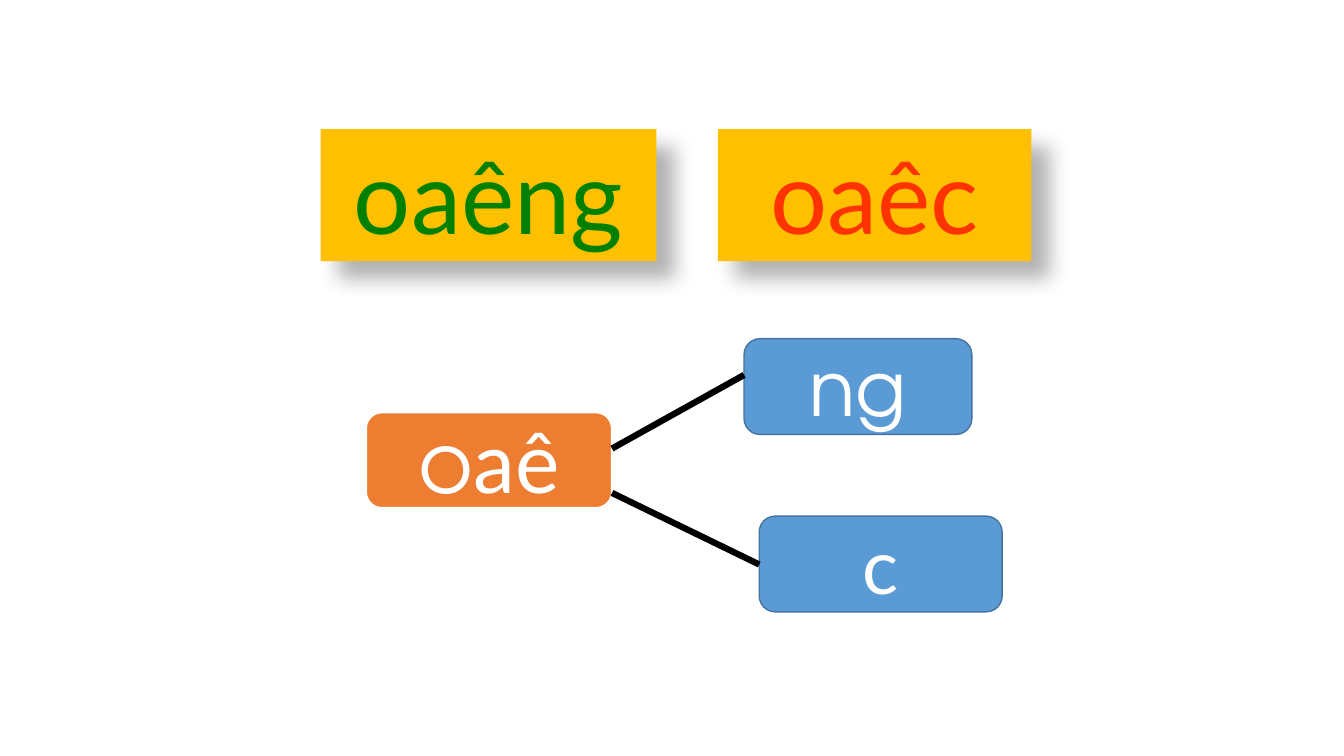
from dataclasses import dataclass

from lxml import etree
from pptx import Presentation
from pptx import util as u
from pptx.dml.color import RGBColor
from pptx.enum import shapes, text
from pptx.oxml.ns import qn

PX = 9144  # EMU per px, 100 px to the inch


@dataclass(frozen=True)
class Theme:
    lato: str = "Lato"
    round: str = "TeX Gyre Adventor"
    gold: str = "FFC000"
    orange: str = "ED7D31"
    blue: str = "5B9BD5"
    edge: str = "43739E"
    green: str = "008000"
    red: str = "FF3300"
    white: str = "FFFFFF"
    black: str = "000000"
    head: int = 72
    stem: int = 60
    tail: int = 54
    link: float = 4.5


T = Theme()


@dataclass(frozen=True)
class Card:
    """A rhyme on a gold card with a soft shadow."""
    left: int
    width: int
    word: str
    ink: str
    top: int = 128
    height: int = 131


@dataclass(frozen=True)
class Node:
    """A rounded box; each piece of its word has its own font."""
    left: int
    top: int
    width: int
    bits: tuple[tuple[str, str], ...]
    fill: str = T.blue
    edge: str = T.edge
    line: float = 1
    size: int = T.tail
    height: int = 95


@dataclass(frozen=True)
class Link:
    x1: int
    y1: int
    x2: int
    y2: int


CARDS = [Card(318, 333, "oaêng", T.green), Card(712, 311, "oaêc", T.red)]
NODES = [
    Node(363, 409, 244, (("o", T.round), ("aê", T.lato)),
         T.orange, T.white, 1.5, T.stem),
    Node(738, 336, 226, (("ng", T.round),)),
    Node(753, 512, 241, (("c", T.lato),)),
]
LINKS = [Link(607, 445, 738, 372), Link(607, 489, 753, 560)]


def rgb(code: str) -> RGBColor:
    return RGBColor.from_string(code)


def add_box(slide, kind, box: Card | Node, fill: str):
    shape = slide.shapes.add_shape(
        kind, box.left * PX, box.top * PX, box.width * PX, box.height * PX)
    shape.shadow.inherit = False
    shape.fill.solid()
    shape.fill.fore_color.rgb = rgb(fill)
    return shape


def write(shape, bits: tuple[tuple[str, str], ...], size: int, ink: str) -> None:
    para = shape.text_frame.paragraphs[0]
    para.alignment = text.PP_ALIGN.CENTER
    for word, font in bits:
        run = para.add_run()
        run.text = word
        run.font.name = font
        run.font.size = u.Pt(size)
        run.font.color.rgb = rgb(ink)


def cast(shape) -> None:
    """Fill the empty effect list with a shadow to the lower right."""
    effects = shape._element.spPr.find(qn("a:effectLst"))
    drop = etree.SubElement(
        effects, qn("a:outerShdw"), blurRad=str(u.Pt(15)), dist=str(u.Pt(18)),
        dir=str(45 * 60000), algn="tl", rotWithShape="0")
    tone = etree.SubElement(drop, qn("a:srgbClr"), val=T.black)
    etree.SubElement(tone, qn("a:alpha"), val="30000")


def add_card(slide, card: Card) -> None:
    shape = add_box(slide, shapes.MSO_SHAPE.RECTANGLE, card, T.gold)
    shape.line.fill.background()
    cast(shape)
    shape.text_frame.vertical_anchor = text.MSO_ANCHOR.TOP
    shape.text_frame.auto_size = text.MSO_AUTO_SIZE.SHAPE_TO_FIT_TEXT
    write(shape, ((card.word, T.lato),), T.head, card.ink)


def add_node(slide, node: Node) -> None:
    shape = add_box(slide, shapes.MSO_SHAPE.ROUNDED_RECTANGLE, node, node.fill)
    shape.line.color.rgb = rgb(node.edge)
    shape.line.width = u.Pt(node.line)
    shape.text_frame.vertical_anchor = text.MSO_ANCHOR.MIDDLE
    write(shape, node.bits, node.size, T.white)


def add_link(slide, link: Link) -> None:
    line = slide.shapes.add_connector(
        shapes.MSO_CONNECTOR.STRAIGHT,
        link.x1 * PX, link.y1 * PX, link.x2 * PX, link.y2 * PX)
    line.line.color.rgb = rgb(T.black)
    line.line.width = u.Pt(T.link)
    etree.SubElement(line._element.spPr, qn("a:effectLst"))


def main() -> None:
    deck = Presentation()
    deck.slide_width, deck.slide_height = 1333 * PX, 750 * PX
    slide = deck.slides.add_slide(deck.slide_layouts[6])

    # Rhymes on top
    for card in CARDS:
        add_card(slide, card)

    # Shared stem and its two endings
    for node in NODES:
        add_node(slide, node)
    for link in LINKS:
        add_link(slide, link)

    deck.save("out.pptx")


if __name__ == "__main__":
    main()
